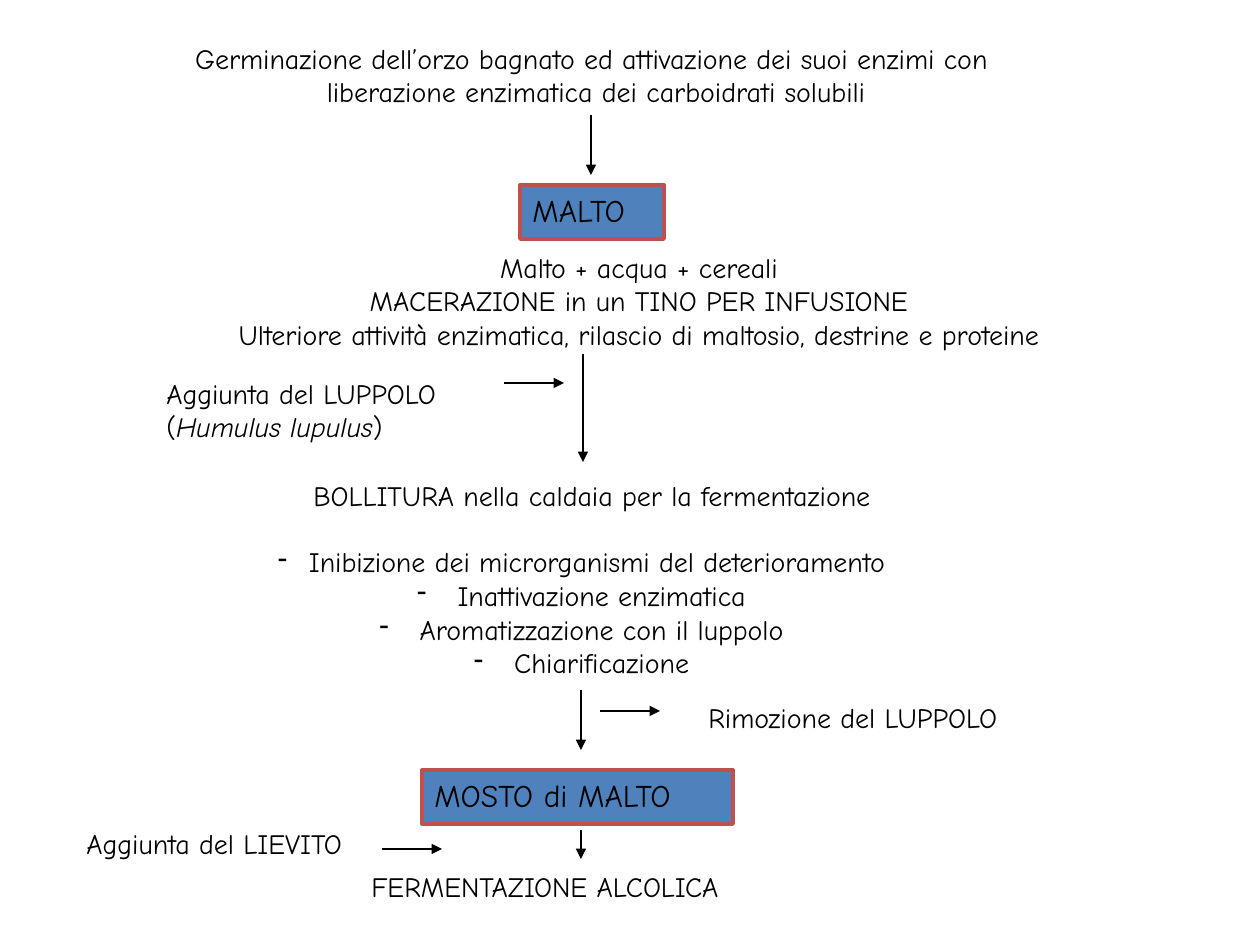
import pptx
import pptx.util
import pptx.dml.color
import pptx.enum.shapes
import pptx.enum.text
import pptx.oxml.ns
from lxml import etree

FONT = "Comic Neue"
BLACK, BLUE, RED = "000000", "4F81BD", "C0504D"
TEXT_PT, PRODUCT_PT, GAP_PT = 16, 18, 19
BULLET_MARGIN, BULLET_INDENT = 10, -31

# (left, top, width, height), centred, paragraphs; a paragraph is a list of (text, italic)
STEPS = [
    ((156, 35, 871, 81), True, [
        [("Germinazione dell’orzo bagnato ed attivazione dei suoi enzimi con", False)],
        [(" liberazione enzimatica dei carboidrati solubili", False)]]),
    ((176, 244, 926, 113), True, [
        [("Malto + acqua + cereali", False)],
        [("MACERAZIONE in un TINO PER INFUSIONE", False)],
        [("Ulteriore attività enzimatica, rilascio di maltosio, destrine e proteine", False)]]),
    ((154, 370, 323, 81), False, [
        [("Aggiunta del LUPPOLO", False)],
        [("(", False), ("Humulus lupulus", True), (")", False)]]),
    ((260, 472, 664, 214), True, [
        [("BOLLITURA nella caldaia per la fermentazione", False)]]),
    ((696, 694, 336, 47), False, [[("Rimozione del LUPPOLO", False)]]),
    ((74, 820, 320, 47), False, [[("Aggiunta del LIEVITO", False)]]),
    ((359, 863, 430, 47), False, [[("FERMENTAZIONE ALCOLICA", False)]]),
]
BOILING = 3  # the step that lists its effects
EFFECTS = ["Inibizione dei microrganismi del deterioramento",
           " Inattivazione enzimatica",
           " Aromatizzazione con il luppolo",
           " Chiarificazione"]
PRODUCTS = [("MALTO", (520, 185, 144, 54)),
            ("MOSTO di MALTO", (422, 770, 311, 54))]
DOWN_ARROWS = [(591, 115, 60), (583, 354, 108), (581, 690, 60), (581, 830, 29)]  # x, y, length
SIDE_ARROWS = [(504, 383), (600, 711), (382, 849)]  # x, y
SIDE_LENGTH = 60


def px(n):
    return pptx.util.Emu(round(n * 914400 / 126))


def color(value):
    return pptx.dml.color.RGBColor.from_string(value)


def child(parent, tag, **attrs):
    return etree.SubElement(parent, pptx.oxml.ns.qn(tag), **attrs)


def format_paragraph(p, size, centred):
    align = pptx.enum.text.PP_ALIGN
    p.alignment = align.CENTER if centred else align.LEFT
    for r in p.runs:
        r.font.name = FONT
        r.font.size = pptx.util.Pt(size)
        r.font.color.rgb = color(BLACK)


def add_step(slide, box, centred, paragraphs):
    tf = slide.shapes.add_textbox(*map(px, box)).text_frame
    tf.word_wrap = True
    for i, runs in enumerate(paragraphs):
        p = tf.add_paragraph() if i else tf.paragraphs[0]
        for text, italic in runs:
            r = p.add_run()
            r.text = text
            if italic:
                r.font.italic = True
        format_paragraph(p, TEXT_PT, centred)
    return tf


def add_effects(tf):
    for i, text in enumerate(EFFECTS):
        p = tf.add_paragraph()
        p.text = text
        if i == 0:
            p.space_before = pptx.util.Pt(GAP_PT)
        pPr = p._p.get_or_add_pPr()
        pPr.set("marL", str(px(BULLET_MARGIN)))
        pPr.set("indent", str(px(BULLET_INDENT)))
        child(pPr, "a:buFontTx")
        child(pPr, "a:buChar", char="-")
        format_paragraph(p, TEXT_PT, True)


def add_product(slide, text, box):
    s = slide.shapes.add_shape(pptx.enum.shapes.MSO_SHAPE.RECTANGLE, *map(px, box))
    s.shadow.inherit = False
    s.fill.solid()
    s.fill.fore_color.rgb = color(BLUE)
    s.line.color.rgb = color(RED)
    s.line.width = pptx.util.Pt(2.25)
    tf = s.text_frame
    tf.word_wrap = True
    tf.vertical_anchor = pptx.enum.text.MSO_ANCHOR.TOP
    tf.text = text
    format_paragraph(tf.paragraphs[0], PRODUCT_PT, False)


def add_arrow(slide, x, y, dx, dy):
    straight = pptx.enum.shapes.MSO_CONNECTOR.STRAIGHT
    s = slide.shapes.add_connector(straight, px(x), px(y), px(x + dx), px(y + dy))
    s.line.color.rgb = color(BLACK)
    s.line.width = pptx.util.Pt(0.75)
    child(s.line._get_or_add_ln(), "a:tailEnd", type="triangle")
    child(s._element.spPr, "a:effectLst")


def main():
    prs = pptx.Presentation()
    prs.slide_width, prs.slide_height = px(1260), px(945)
    slide = prs.slides.add_slide(prs.slide_layouts[6])
    frames = [add_step(slide, *step) for step in STEPS]
    add_effects(frames[BOILING])
    for text, box in PRODUCTS:
        add_product(slide, text, box)
    for x, y, length in DOWN_ARROWS:
        add_arrow(slide, x, y, 0, length)
    for x, y in SIDE_ARROWS:
        add_arrow(slide, x, y, SIDE_LENGTH, 0)
    prs.save("out.pptx")


if __name__ == "__main__":
    main()
